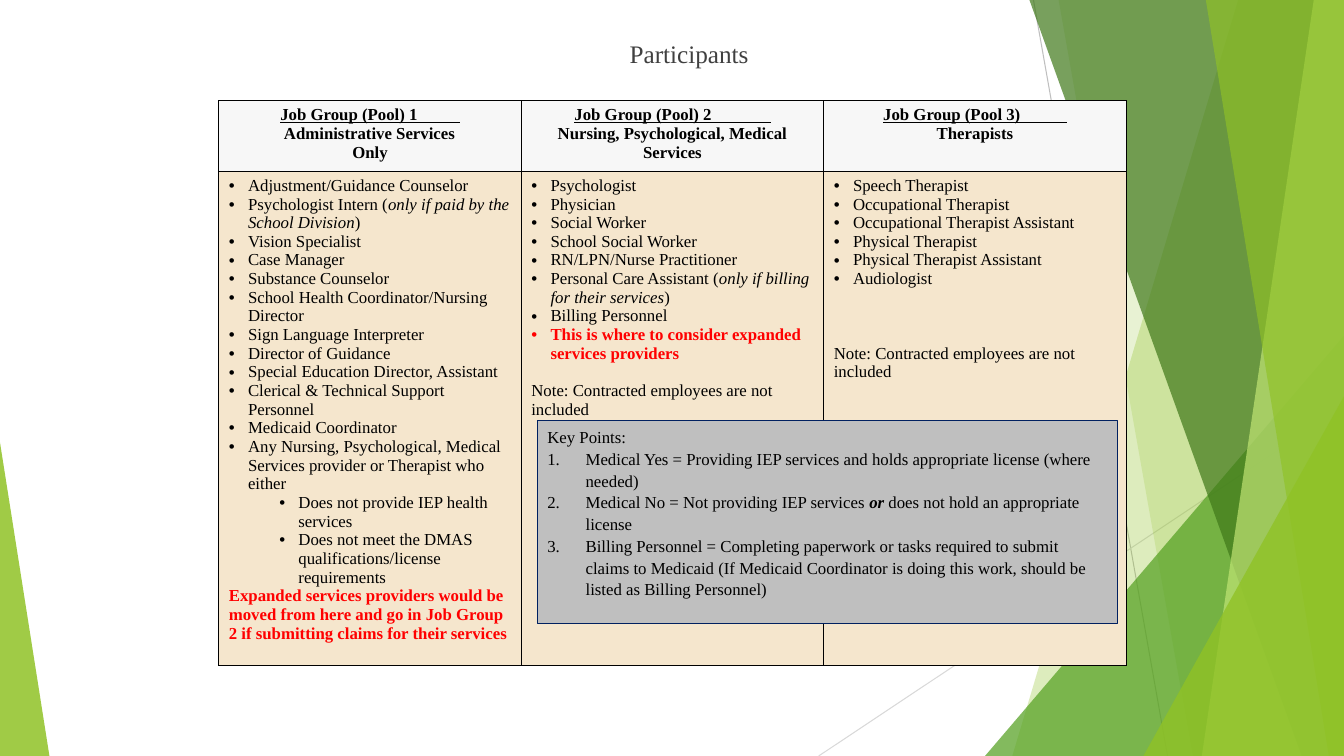
"""Build the Participants slide: three job groups in a table and a key points box."""
import pptx
import pptx.util
import pptx.dml.color
import pptx.enum.shapes
import pptx.enum.text
import pptx.oxml
from dataclasses import dataclass

TITLE = "Participants"
NOTE = "Note: Contracted employees are not included"
HEADERS = [
    ("Job Group (Pool) 1", 10, [" Administrative Services ", "Only"]),
    ("Job Group (Pool) 2", 14, ["Nursing, Psychological, Medical Services"]),
    ("Job Group (Pool 3)", 11, ["Therapists"]),
]
GROUPS = [
    [("bullet", "Adjustment/Guidance Counselor"),
     ("bullet", "Psychologist Intern (*only if paid by the School Division*)"),
     ("bullet", "Vision Specialist"),
     ("bullet", "Case Manager"),
     ("bullet", "Substance Counselor"),
     ("bullet", "School Health Coordinator/Nursing Director"),
     ("bullet", "Sign Language Interpreter"),
     ("bullet", "Director of Guidance"),
     ("bullet", "Special Education Director, Assistant"),
     ("bullet", "Clerical & Technical Support Personnel"),
     ("bullet", "Medicaid Coordinator"),
     ("bullet", "Any Nursing, Psychological, Medical Services provider or Therapist who either"),
     ("sub", "Does not provide IEP health services"),
     ("sub", "Does not meet the DMAS qualifications/license requirements"),
     ("alert", "Expanded services providers would be moved from here and go in "
               "Job Group 2 if submitting claims for their services")],
    [("bullet", "Psychologist"),
     ("bullet", "Physician"),
     ("bullet", "Social Worker"),
     ("bullet", "School Social Worker"),
     ("bullet", "RN/LPN/Nurse Practitioner"),
     ("bullet", "Personal Care Assistant (*only if billing for their services*)"),
     ("bullet", "Billing Personnel"),
     ("alert bullet", "This is where to consider expanded services providers"),
     ("note 1", NOTE)],
    [("bullet", "Speech Therapist"),
     ("bullet", "Occupational Therapist"),
     ("bullet", "Occupational Therapist Assistant"),
     ("bullet", "Physical Therapist"),
     ("bullet", "Physical Therapist Assistant"),
     ("bullet", "Audiologist"),
     ("note 3", NOTE)],
]
KEY_POINTS = [
    ("plain", "Key Points:"),
    ("number", "Medical Yes = Providing IEP services and holds appropriate license (where needed)"),
    ("number", "Medical No = Not providing IEP services **or** does not hold an appropriate license"),
    ("number", "Billing Personnel = Completing paperwork or tasks required to submit claims to Medicaid "
               "(If Medicaid Coordinator is doing this work, should be listed as Billing Personnel)"),
]


@dataclass(frozen=True)
class Theme:
    font: str = "Times New Roman"
    title_size: int = 18
    body_size: int = 12
    line_height: float = 13.3
    title: str = "404040"
    text: str = "000000"
    alert: str = "FF0000"
    header_fill: str = "F7F7F7"
    body_fill: str = "F5E6CD"
    key_fill: str = "BFBFBF"
    key_line: str = "002060"
    lime: str = "90C226"
    green: str = "54A021"
    dark: str = "3F7819"
    pale: str = "C0E474"


T = Theme()
W, H = 13.33, 7.5
COL, HEADER_ROW, BODY_ROW = 3, 0.7, 4.9
RAYS = [((10.25, 0), (11.58, H), "BFBFBF"), ((W, 4.03), (8.12, H), "D9D9D9")]
FACETS = [
    ("band", 12.28, 10.04, T.lime, 30),
    ("band", 10.5, 11.83, T.lime, 20),
    ("triangle", 9.77, 3.33, T.green, 72),
    ("band", 10.21, 12.91, T.dark, 70),
    ("band", 13.03, 11.92, T.pale, 70),
    ("band", 11.96, 13.18, T.lime, 65),
    ("triangle", 11.34, 3.93, T.lime, 80),
    ("left triangle", 0, 4.39, T.lime, 85),
]
LEFT_TRIANGLE_WIDTH = 0.49
INDENT = {"bullet": (0.19, 0.19), "sub": (0.69, 0.19), "number": (0.38, 0.38)}

inch, pt = pptx.util.Inches, pptx.util.Pt
rgb = pptx.dml.color.RGBColor.from_string
NS = 'xmlns:a="http://schemas.openxmlformats.org/drawingml/2006/main"'


def xml(parent, markup):
    name, rest = markup[1:].split(":", 1)
    tag_end = min(i for i in (rest.find(c) for c in " />") if i >= 0)
    node = pptx.oxml.parse_xml(f"<{name}:{rest[:tag_end]} {NS}{rest[tag_end:]}")
    parent.append(node)


def set_font(font, color=T.text, size=T.body_size, bold=False):
    font.name, font.size, font.bold = T.font, pt(size), bold
    font.color.rgb = rgb(color)


def write(tf, items):
    for i, (style, text) in enumerate(items):
        p = tf.paragraphs[0] if i == 0 else tf.add_paragraph()
        kind = style.split()[-1]
        if kind in INDENT:
            left, hang = INDENT[kind]
            pPr = p._p.get_or_add_pPr()
            pPr.set("marL", str(inch(left)))
            pPr.set("indent", str(-inch(hang)))
            if kind == "number":
                xml(pPr, '<a:buFont typeface="+mj-lt"/>')
                xml(pPr, '<a:buAutoNum type="arabicPeriod"/>')
            else:
                xml(pPr, '<a:buFont typeface="Arial"/>')
                xml(pPr, '<a:buChar char="•"/>')
        if kind == "sub":
            p.level = 1
        if style.startswith("note"):
            p.space_before = pt(int(kind) * T.line_height)
        if style.startswith("head"):
            p.alignment = pptx.enum.text.PP_ALIGN.CENTER
        alert = style.startswith("alert")
        set_font(p.font, T.alert if alert else T.text, bold=alert or style.startswith("head"))
        p.font.underline = kind == "underlined"
        strong = "**" in text
        for j, part in enumerate(text.split("**" if strong else "*")):
            r = p.add_run()
            r.text = part
            if j % 2:
                r.font.italic = True
                if strong:
                    r.font.bold = True


def add_facet(s, kind, a, b, color, alpha):
    if kind == "band":
        fb = s.shapes.build_freeform(inch(a), 0, scale=1.0)
        fb.add_line_segments([(inch(x), inch(y)) for x, y in ((W, 0), (W, H), (b, H))])
        sp = fb.convert_to_shape()
    else:
        at_left = kind == "left triangle"
        width = LEFT_TRIANGLE_WIDTH if at_left else W - a
        sp = s.shapes.add_shape(pptx.enum.shapes.MSO_SHAPE.ISOSCELES_TRIANGLE,
                                inch(a), inch(b), inch(width), inch(H - b))
        sp.adjustments[0] = 0 if at_left else 1
    sp.shadow.inherit = False
    sp.fill.solid()
    sp.fill.fore_color.rgb = rgb(color)
    xml(sp._element.spPr.find(".//{*}srgbClr"), f'<a:alpha val="{alpha * 1000}"/>')
    sp.line.fill.background()


def add_groups(s):
    table = s.shapes.add_table(2, len(GROUPS), inch(2.17), inch(1), inch(COL * len(GROUPS)),
                               inch(HEADER_ROW + BODY_ROW)).table
    table.rows[0].height, table.rows[1].height = inch(HEADER_ROW), inch(BODY_ROW)
    for c, ((name, rule, lines), group) in enumerate(zip(HEADERS, GROUPS)):
        header = [("head underlined", name + " " * rule)] + [("head", line) for line in lines]
        for row, items, fill in ((0, header, T.header_fill), (1, group, T.body_fill)):
            cell = table.cell(row, c)
            tcPr = cell._tc.get_or_add_tcPr()
            for side in "LRTB":
                xml(tcPr, f'<a:ln{side} w="12700"><a:solidFill><a:srgbClr val="{T.text}"/>'
                          f'</a:solidFill></a:ln{side}>')
            cell.fill.solid()
            cell.fill.fore_color.rgb = rgb(fill)
            write(cell.text_frame, items)


def add_key_points(s):
    sp = s.shapes.add_shape(pptx.enum.shapes.MSO_SHAPE.RECTANGLE,
                            inch(5.33), inch(4.17), inch(5.75), inch(2.02))
    sp.shadow.inherit = False
    sp.fill.solid()
    sp.fill.fore_color.rgb = rgb(T.key_fill)
    sp.line.color.rgb, sp.line.width = rgb(T.key_line), pt(0.75)
    tf = sp.text_frame
    tf.word_wrap, tf.vertical_anchor = True, pptx.enum.text.MSO_ANCHOR.TOP
    write(tf, KEY_POINTS)
    for p in tf.paragraphs:
        p.alignment, p.line_spacing = pptx.enum.text.PP_ALIGN.LEFT, 1.08


def main():
    prs = pptx.Presentation()
    prs.slide_width, prs.slide_height = inch(W), inch(H)
    s = prs.slides.add_slide(prs.slide_layouts[5])
    for start, end, color in RAYS:
        ray = s.shapes.add_connector(pptx.enum.shapes.MSO_CONNECTOR.STRAIGHT,
                                     *(inch(v) for v in start + end))
        ray.line.color.rgb, ray.line.width = rgb(color), pt(0.75)
        xml(ray._element.spPr, "<a:effectLst/>")
    for facet in FACETS:
        add_facet(s, *facet)
    title = s.shapes.title
    title.left, title.top, title.width, title.height = map(inch, (2.42, 0.33, 8.83, 6.33))
    tf = title.text_frame
    tf.text, tf.vertical_anchor = TITLE, pptx.enum.text.MSO_ANCHOR.TOP
    tf.paragraphs[0].alignment = pptx.enum.text.PP_ALIGN.CENTER
    set_font(tf.paragraphs[0].font, T.title, T.title_size)
    add_groups(s)
    add_key_points(s)
    prs.save("out.pptx")


if __name__ == "__main__":
    main()
